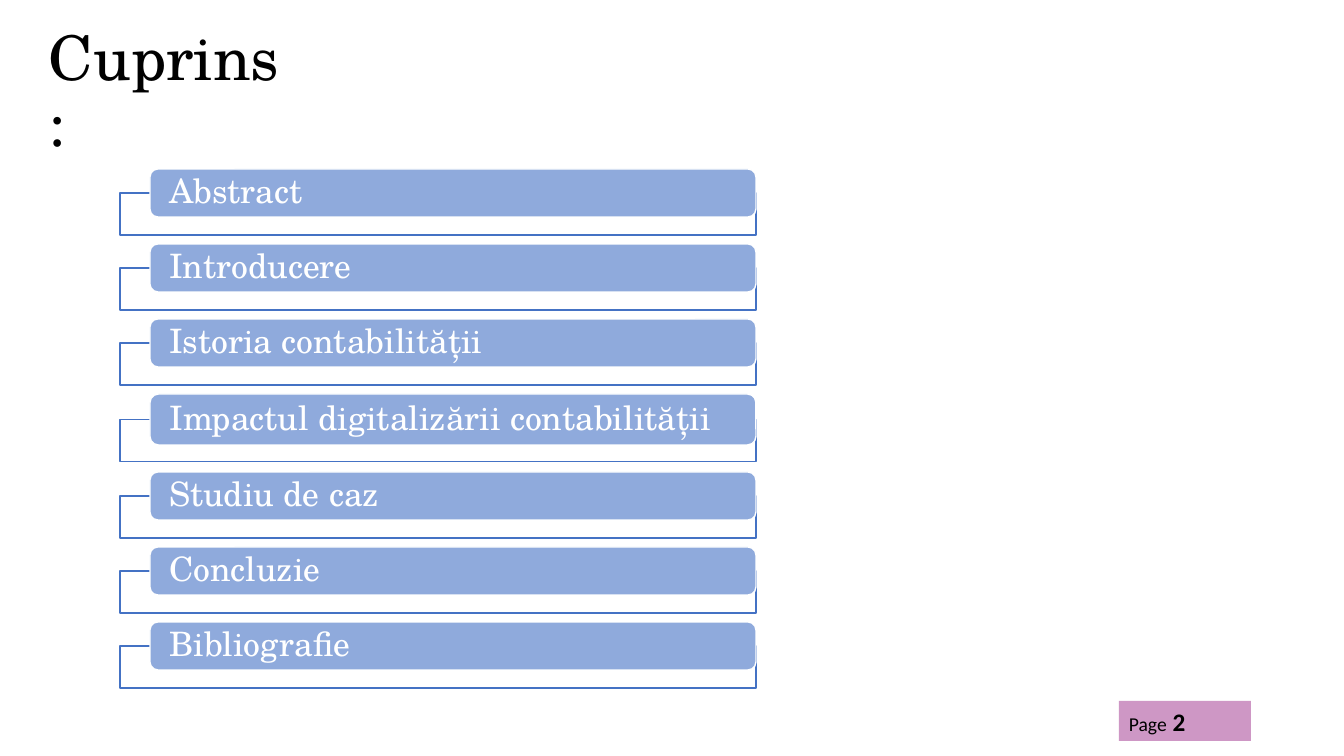
"""Build the table-of-contents slide."""
from lxml.etree import SubElement
from pptx import Presentation
from pptx.dml.color import RGBColor
from pptx.enum.shapes import MSO_SHAPE as SHAPE
from pptx.enum.text import MSO_ANCHOR as ANCHOR, PP_ALIGN as ALIGN
from pptx.oxml.ns import qn
from pptx.util import Emu, Pt

TITLE = "Cuprins:"
CHAPTERS = [
    "Abstract",
    "Introducere",
    "Istoria contabilității",
    "Impactul digitalizării contabilității",
    "Studiu de caz",
    "Concluzie",
    "Bibliografie",
]
PAGE_RUNS = [("Page", {"size": Pt(14)}), (" 2", {"size": Pt(18), "bold": True})]

COLORS = {
    "black": "000000",
    "white": "FFFFFF",
    "tab": "8FAADC",
    "frame": "4472C4",
    "page": "9F318D",
}
SERIF, SANS = "TeX Gyre Schola", "Calibri"

SLIDE_SIZE = (1344, 756)
TITLE_BOX = (39, 46, 263, 95)
PAGE_BOX = (1119, 701, 132, 40)
FRAME_LEFT, FRAME_WIDTH, FRAME_HEIGHT = 120, 636, 42
TAB_LEFT, TAB_WIDTH, TAB_HEIGHT = 150, 606, 48
TALL_TABS = {"Impactul digitalizării contabilității": 51}
FIRST_TAB_TOP, TAB_GAP, TAB_INSET = 169, 27, 17


def px(length):
    return Emu(round(length * 914400 / 100.8))


def rgb(name):
    return RGBColor.from_string(COLORS[name])


def add_block(slide, kind, box, fill, line=None, opacity=100):
    block = slide.shapes.add_shape(kind, *map(px, box))
    block.shadow.inherit = False
    block.fill.solid()
    block.fill.fore_color.rgb = rgb(fill)
    if opacity < 100:
        color = block.fill._xPr.find(qn("a:solidFill"))[0]
        SubElement(color, qn("a:alpha"), val=str(opacity * 1000))
    if line:
        block.line.color.rgb = rgb(line)
        block.line.width = Pt(1)
    else:
        block.line.fill.background()
    return block


def write(shape, runs, font, color, frame_format, spacing=1.0):
    frame = shape.text_frame
    for key, value in {"word_wrap": True, **frame_format}.items():
        setattr(frame, key, value)
    paragraph = frame.paragraphs[0]
    paragraph.alignment = ALIGN.LEFT
    paragraph.line_spacing = spacing
    for text, font_format in runs:
        run = paragraph.add_run()
        run.text = text
        run.font.color.rgb = rgb(color)
        for key, value in {"name": font, **font_format}.items():
            setattr(run.font, key, value)


def main():
    deck = Presentation()
    deck.slide_width, deck.slide_height = map(px, SLIDE_SIZE)
    slide = deck.slides.add_slide(deck.slide_layouts[6])

    title = slide.shapes.add_textbox(*map(px, TITLE_BOX))
    write(title, [(TITLE, {"size": Pt(44)})], SERIF, "black",
          {"vertical_anchor": ANCHOR.MIDDLE}, 0.9)

    page = add_block(slide, SHAPE.RECTANGLE, PAGE_BOX, "page", opacity=50)
    write(page, PAGE_RUNS, SANS, "black", {"vertical_anchor": ANCHOR.TOP})

    tab_format = {
        "vertical_anchor": ANCHOR.MIDDLE,
        "margin_left": px(TAB_INSET),
        "margin_right": px(TAB_INSET),
        "margin_top": 0,
        "margin_bottom": 0,
    }
    top = FIRST_TAB_TOP
    for chapter in CHAPTERS:
        height = TALL_TABS.get(chapter, TAB_HEIGHT)
        frame_box = (FRAME_LEFT, top + height / 2, FRAME_WIDTH, FRAME_HEIGHT)
        add_block(slide, SHAPE.RECTANGLE, frame_box, "white", "frame", 90)
        tab = add_block(slide, SHAPE.ROUNDED_RECTANGLE,
                        (TAB_LEFT, top, TAB_WIDTH, height), "tab", "white")
        write(tab, [(chapter, {"size": Pt(24)})], SERIF, "white", tab_format, 0.9)
        top += height + TAB_GAP

    deck.save("out.pptx")


if __name__ == "__main__":
    main()
